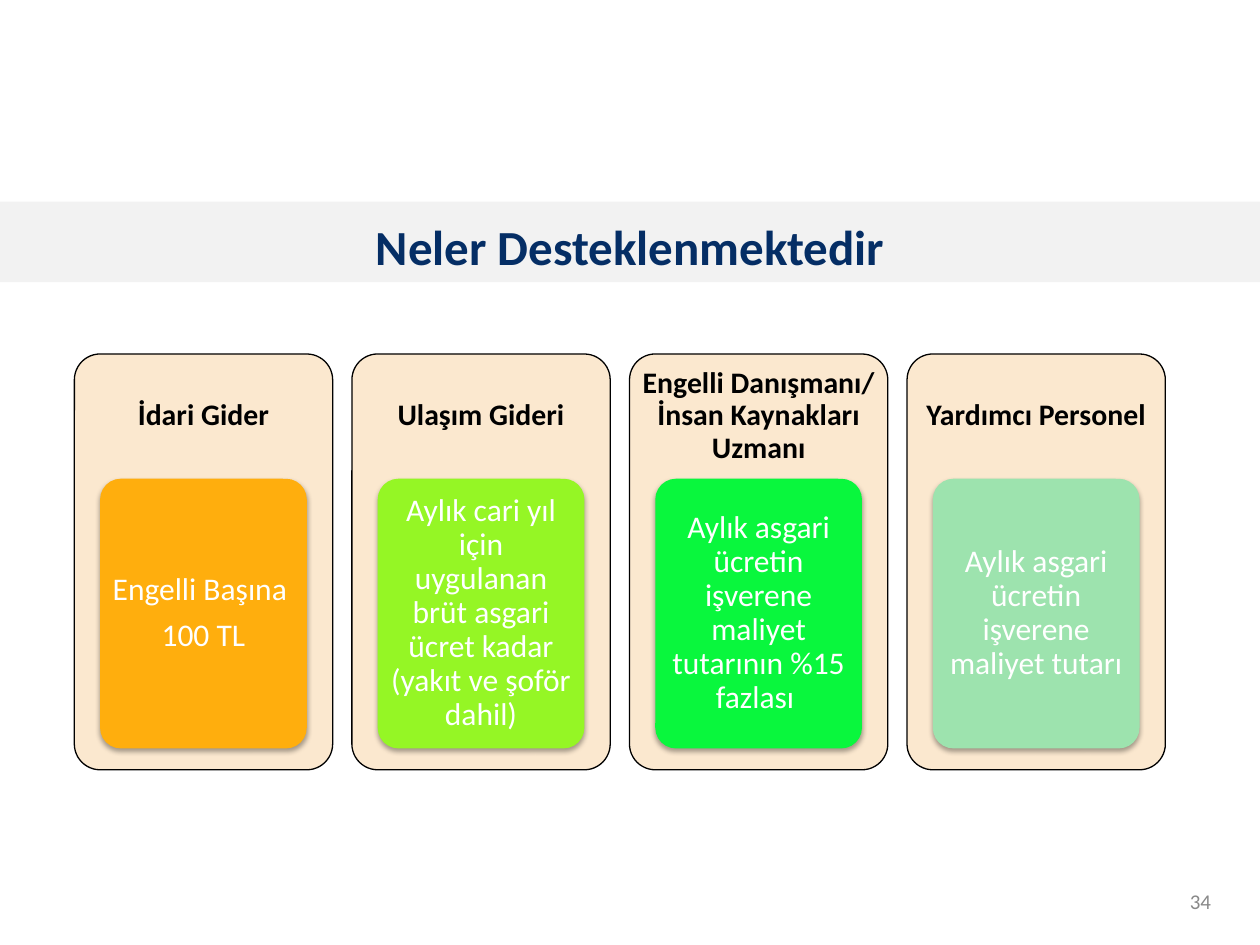
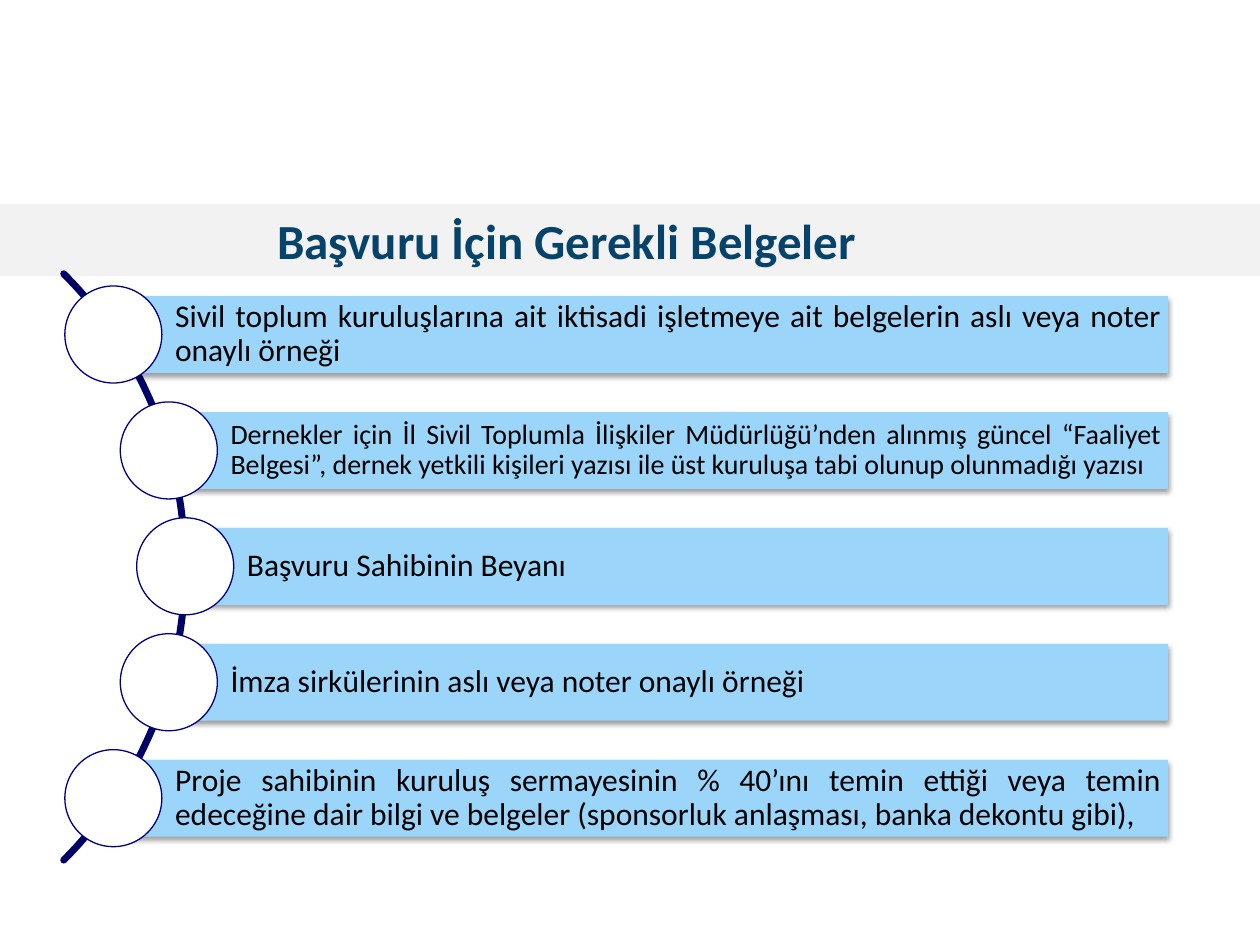
from math import cos, radians, sin

from lxml import etree
from pptx import Presentation
from pptx.dml.color import RGBColor
from pptx.enum.shapes import MSO_SHAPE
from pptx.enum.text import MSO_ANCHOR, MSO_AUTO_SIZE, PP_ALIGN
from pptx.oxml.ns import qn
from pptx.util import Inches, Pt

LEFT, CENTER, RIGHT, JUSTIFY = (
    PP_ALIGN.LEFT, PP_ALIGN.CENTER, PP_ALIGN.RIGHT, PP_ALIGN.JUSTIFY)
TOP, MIDDLE = MSO_ANCHOR.TOP, MSO_ANCHOR.MIDDLE
ROUNDED, RECTANGLE, OVAL = (
    MSO_SHAPE.ROUNDED_RECTANGLE, MSO_SHAPE.RECTANGLE, MSO_SHAPE.OVAL)

# Shared style
FONT = "Calibri"
WHITE = RGBColor(0xFF, 0xFF, 0xFF)
BLACK = RGBColor(0, 0, 0)
BAND_GRAY = RGBColor(0xF2, 0xF2, 0xF2)
NUMBER_GRAY = RGBColor(0x89, 0x89, 0x89)
SUPPORT_NAVY = RGBColor(0x05, 0x2E, 0x65)
DOCUMENT_NAVY = RGBColor(0x06, 0x43, 0x6B)
CREAM = RGBColor(0xFB, 0xE8, 0xCF)
ORANGE = RGBColor(0xFF, 0xAE, 0x0D)
LIME = RGBColor(0x95, 0xF6, 0x25)
GREEN = RGBColor(0x09, 0xF7, 0x3D)
MINT = RGBColor(0x9D, 0xE3, 0xAE)
SKY = RGBColor(0x9B, 0xD5, 0xFA)
ARC_NAVY = RGBColor(0, 0, 0x67)
CIRCLE_NAVY = RGBColor(0, 0, 0x80)

# Content
SUPPORT_TITLE = "Neler Desteklenmektedir"
SUPPORTS = [
    ("İdari Gider", ["Engelli Başına ", "100 TL"], ORANGE),
    ("Ulaşım Gideri",
     ["Aylık cari yıl için uygulanan brüt asgari ücret kadar "
      "(yakıt ve şoför dahil)"], LIME),
    ("Engelli Danışmanı/ İnsan Kaynakları Uzmanı",
     ["Aylık asgari ücretin işverene maliyet tutarının %15 fazlası "], GREEN),
    ("Yardımcı Personel",
     ["Aylık asgari ücretin işverene maliyet tutarı"], MINT),
]
PAGE_NUMBER = "34"

DOCUMENT_TITLE = "Başvuru İçin Gerekli Belgeler"
# Text, left edge in inches, text size, alignment
DOCUMENTS = [
    ("Sivil toplum kuruluşlarına ait iktisadi işletmeye ait belgelerin aslı "
     "veya noter onaylı örneği", 0.9, 18, JUSTIFY),
    ("Dernekler için İl Sivil Toplumla İlişkiler Müdürlüğü’nden alınmış güncel "
     "“Faaliyet Belgesi”, dernek yetkili kişileri yazısı ile üst kuruluşa tabi "
     "olunup olunmadığı yazısı", 1.34, 16, JUSTIFY),
    ("Başvuru Sahibinin Beyanı ", 1.47, 18, JUSTIFY),
    ("İmza sirkülerinin aslı veya noter onaylı örneği", 1.34, 18, LEFT),
    ("Proje sahibinin kuruluş sermayesinin % 40’ını temin ettiği veya temin "
     "edeceğine dair bilgi ve belgeler (sponsorluk anlaşması, banka dekontu "
     "gibi),", 0.9, 18, JUSTIFY),
]


def write(shape, *lines, size=18, color=BLACK, bold=False, align=CENTER,
          anchor=MIDDLE, spacing=0.9, margins=(0.1, 0.05, 0.1, 0.05)):
    """Fill a shape with paragraphs; margins are left, top, right, bottom."""
    frame = shape.text_frame
    frame.word_wrap = True
    frame.auto_size = MSO_AUTO_SIZE.NONE
    frame.vertical_anchor = anchor
    (frame.margin_left, frame.margin_top,
     frame.margin_right, frame.margin_bottom) = map(Inches, margins)
    for i, line in enumerate(lines):
        paragraph = frame.add_paragraph() if i else frame.paragraphs[0]
        paragraph.alignment = align
        paragraph.line_spacing = spacing
        paragraph.space_before = Pt(7 if i else 0)
        run = paragraph.add_run()
        run.text = line
        run.font.name = FONT
        run.font.size = Pt(size)
        run.font.bold = bold
        run.font.color.rgb = color


def add_block(slide, preset, left, top, width, height, fill,
              outline=None, shadow=None):
    """Add a filled shape; shadow is (distance in points, opacity percent)."""
    block = slide.shapes.add_shape(
        preset, Inches(left), Inches(top), Inches(width), Inches(height))
    if preset == ROUNDED:
        block.adjustments[0] = 0.1
    block.fill.solid()
    block.fill.fore_color.rgb = fill
    if outline is None:
        block.line.fill.background()
    else:
        block.line.color.rgb = outline
        block.line.width = Pt(0.75)
    block.shadow.inherit = False
    if shadow:
        distance, opacity = shadow
        effects = block.element.spPr.find(qn("a:effectLst"))
        outer = etree.SubElement(
            effects, qn("a:outerShdw"), blurRad=str(Pt(3.1)),
            dist=str(Pt(distance)), dir="5400000", rotWithShape="0")
        tone = etree.SubElement(outer, qn("a:srgbClr"), val="000000")
        etree.SubElement(tone, qn("a:alpha"), val=str(opacity * 1000))
    return block


def add_titled_slide(deck, title, top, height, **text_format):
    slide = deck.slides.add_slide(deck.slide_layouts[5])
    band = slide.shapes.title
    band.left, band.top = 0, Inches(top)
    band.width, band.height = deck.slide_width, Inches(height)
    band.fill.solid()
    band.fill.fore_color.rgb = BAND_GRAY
    write(band, title, size=28, bold=True, anchor=TOP, **text_format)
    return slide


def build_supports(deck):
    slide = add_titled_slide(deck, SUPPORT_TITLE, 1.6, 0.64,
                             color=SUPPORT_NAVY, spacing=1.15)

    # Cards with a heading above a coloured panel
    card_width, panel_width, pitch = 2.05, 1.64, 2.203
    for i, (heading, details, color) in enumerate(SUPPORTS):
        left = 0.59 + i * pitch
        card = add_block(slide, ROUNDED, left, 2.81, card_width, 3.3,
                         CREAM, outline=BLACK)
        write(card, heading, size=17, bold=True,
              margins=(0.01, 0.01, 0.01, 2.32))
        panel = add_block(slide, ROUNDED, left + (card_width - panel_width) / 2,
                          3.8, panel_width, 2.14, color, shadow=(1.8, 35))
        write(panel, *details, color=WHITE, margins=(0.05, 0.04, 0.05, 0.04))

    # Page number
    number = slide.shapes.add_textbox(
        Inches(7.17), Inches(6.95), Inches(2.54), Inches(0.4))
    write(number, PAGE_NUMBER, size=12, color=NUMBER_GRAY, align=RIGHT,
          spacing=1)


def build_documents(deck):
    slide = add_titled_slide(deck, DOCUMENT_TITLE, 1.62, 0.57,
                             color=DOCUMENT_NAVY, align=LEFT, spacing=1,
                             margins=(2.2, 0.05, 0.1, 0.05))

    # Arc from 45 degrees above to 45 degrees below the middle row
    center_x, center_y, radius = -1.82, 4.5, 3.29
    points = [(Inches(center_x + radius * cos(radians(angle))),
               Inches(center_y + radius * sin(radians(angle))))
              for angle in range(-45, 46)]
    builder = slide.shapes.build_freeform(*points[0])
    builder.add_line_segments(points[1:], close=False)
    arc = builder.convert_to_shape()
    arc.fill.background()
    arc.line.color.rgb = ARC_NAVY
    arc.line.width = Pt(4)
    arc.shadow.inherit = False
    outline = arc.line._get_or_add_ln()
    etree.SubElement(outline, qn("a:round"))
    outline.set("cap", "rnd")

    # Rows, each with a circle centred on its left edge
    right_edge, row_height, pitch, diameter = 9.27, 0.61, 0.92, 0.77
    for i, (text, left, size, align) in enumerate(DOCUMENTS):
        top = 2.35 + i * pitch
        row = add_block(slide, RECTANGLE, left, top, right_edge - left,
                        row_height, SKY, shadow=(1.6, 38))
        write(row, text, size=size, align=align,
              margins=(0.49, 0.05, 0.05, 0.05))
        add_block(slide, OVAL, left - diameter / 2,
                  top + (row_height - diameter) / 2, diameter, diameter,
                  WHITE, outline=CIRCLE_NAVY)


def main():
    deck = Presentation()
    deck.slide_width, deck.slide_height = Inches(10), Inches(7.5)
    build_supports(deck)
    build_documents(deck)
    deck.save("out.pptx")


if __name__ == "__main__":
    main()
